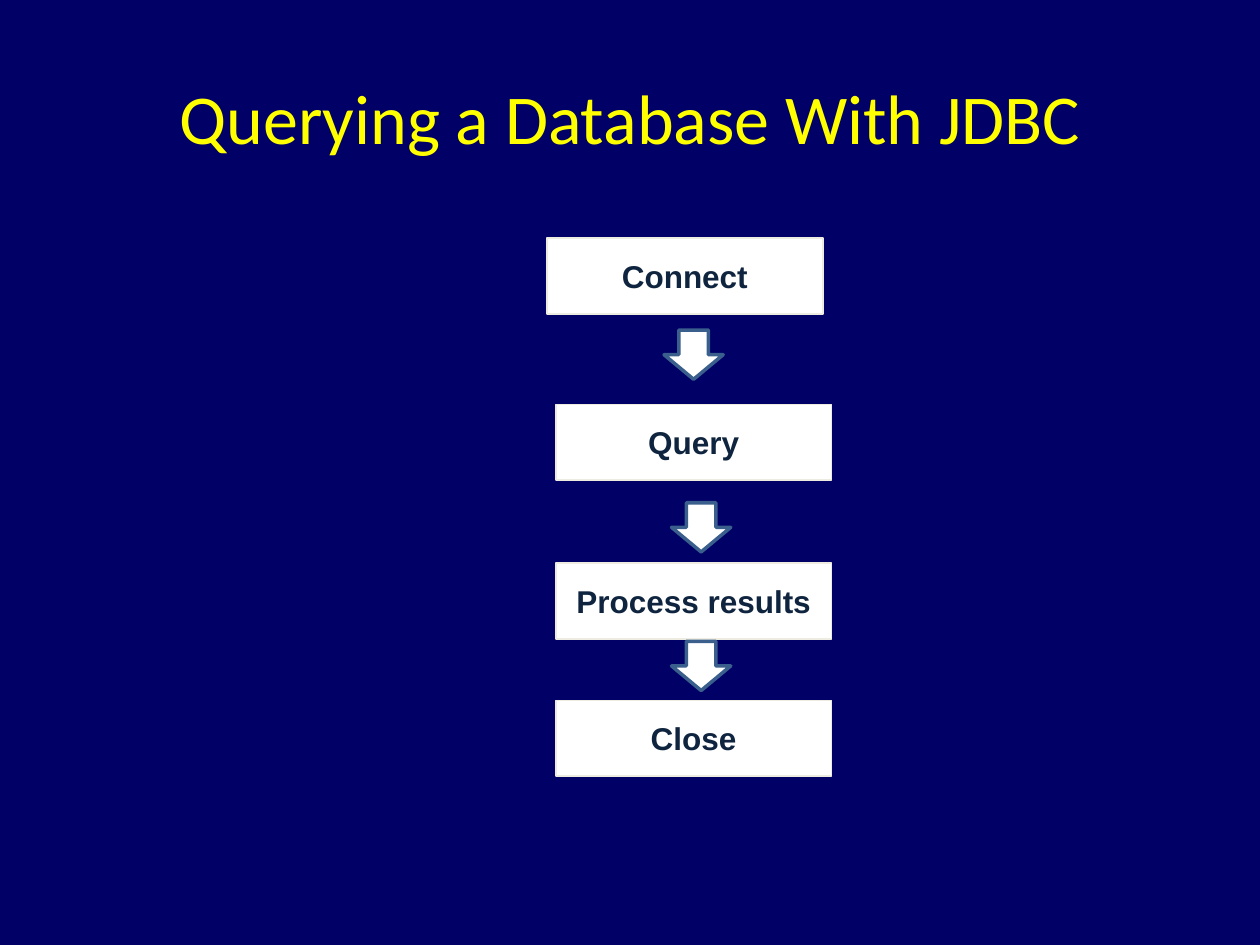
from dataclasses import dataclass

from pptx import Presentation
from pptx.dml.color import RGBColor
from pptx.enum.shapes import MSO_SHAPE as Preset
from pptx.enum.text import MSO_ANCHOR as Anchor, PP_ALIGN as Align
from pptx.util import Inches, Pt


@dataclass(frozen=True)
class Theme:
    background: str = "000066"
    title: str = "FFFF00"
    fill: str = "FFFFFF"
    box_line: str = "EEECE1"
    arrow_line: str = "3A5F8C"
    label: str = "0F243E"
    title_font: str = "Calibri"
    label_font: str = "Arial"
    title_size: int = 40
    label_size: int = 18


@dataclass(frozen=True)
class Step:
    label: str
    left: float
    top: float


@dataclass(frozen=True)
class Arrow:
    left: float
    top: float


THEME = Theme()
BOX_SIZE = (2.19, 0.6)
ARROW_SIZE = (0.47, 0.39)
FIRST_BOX, BOX_COLUMN = 4.34, 4.41
FIRST_ARROW, ARROW_COLUMN = 5.27, 5.33

STEPS = [
    Step("Connect", FIRST_BOX, 1.89),
    Step("Query", BOX_COLUMN, 3.21),
    Step("Process results", BOX_COLUMN, 4.47),
    Step("Close", BOX_COLUMN, 5.56),
]
ARROWS = [
    Arrow(FIRST_ARROW, 2.62),
    Arrow(ARROW_COLUMN, 3.99),
    Arrow(ARROW_COLUMN, 5.09),
]


def color(value: str) -> RGBColor:
    return RGBColor.from_string(value)


def write(frame, text: str, font: str, size: int, ink: str, bold: bool) -> None:
    frame.text = text
    frame.vertical_anchor = Anchor.MIDDLE
    para = frame.paragraphs[0]
    para.alignment = Align.CENTER
    span = para.runs[0]
    span.font.name = font
    span.font.size = Pt(size)
    span.font.bold = bold
    span.font.color.rgb = color(ink)


def add_outlined(page, preset, left: float, top: float,
                 size: tuple[float, float], line: str, weight: float):
    shape = page.shapes.add_shape(
        preset, *(Inches(length) for length in (left, top, *size)))
    shape.shadow.inherit = False
    shape.fill.solid()
    shape.fill.fore_color.rgb = color(THEME.fill)
    shape.line.color.rgb = color(line)
    shape.line.width = Pt(weight)
    return shape


def add_step(page, step: Step) -> None:
    box = add_outlined(page, Preset.RECTANGLE, step.left, step.top,
                       BOX_SIZE, THEME.box_line, 1)
    write(box.text_frame, step.label, THEME.label_font,
          THEME.label_size, THEME.label, True)
    box.text_frame.word_wrap = False


def add_arrow(page, arrow: Arrow) -> None:
    add_outlined(page, Preset.DOWN_ARROW, arrow.left, arrow.top,
                 ARROW_SIZE, THEME.arrow_line, 2)


def main() -> None:
    deck = Presentation()
    deck.slide_width, deck.slide_height = Inches(10), Inches(7.5)
    page = deck.slides.add_slide(deck.slide_layouts[5])
    page.background.fill.solid()
    page.background.fill.fore_color.rgb = color(THEME.background)

    # Title
    title = page.shapes.title
    title.left, title.top = Inches(0.5), Inches(0.3)
    title.width, title.height = Inches(9), Inches(1.25)
    write(title.text_frame, "Querying a Database With JDBC",
          THEME.title_font, THEME.title_size, THEME.title, False)

    # Steps, then the arrows between them
    for step in STEPS:
        add_step(page, step)
    for arrow in ARROWS:
        add_arrow(page, arrow)

    deck.save("out.pptx")


if __name__ == "__main__":
    main()
